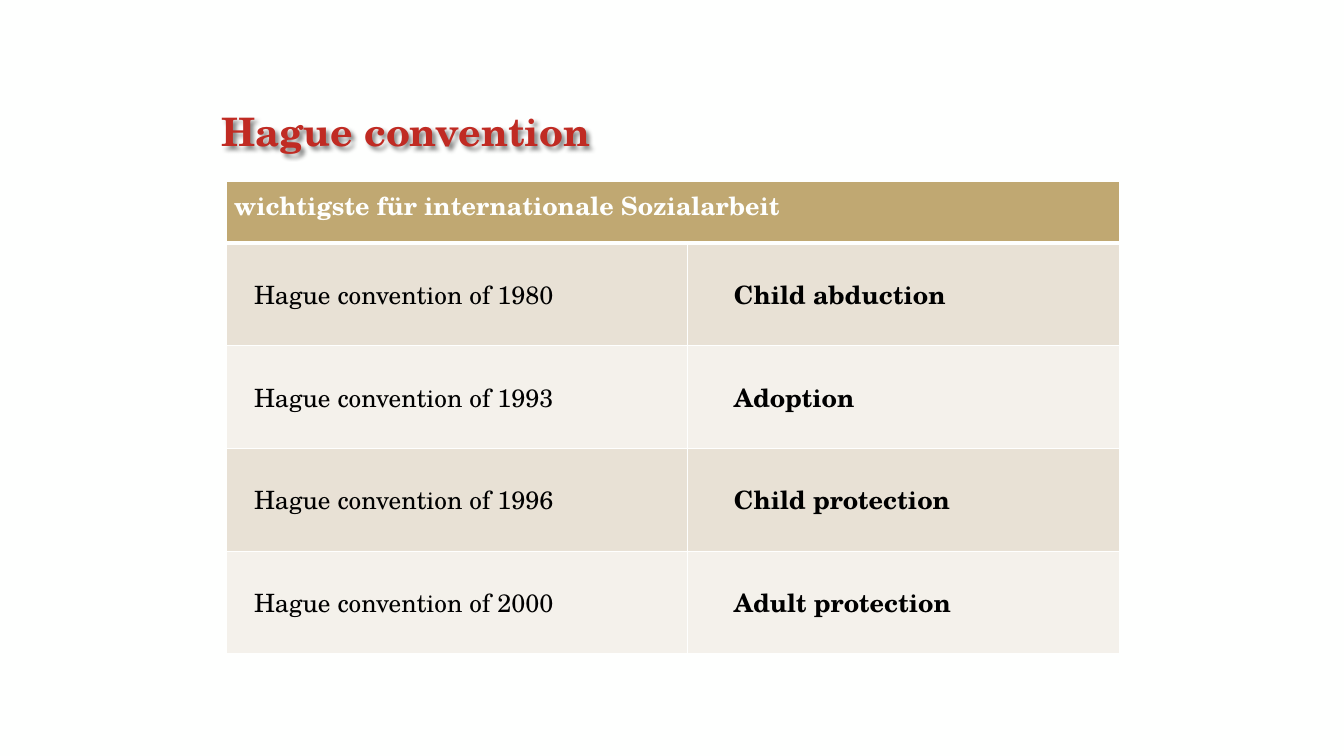
from dataclasses import dataclass

import lxml.etree
import pptx
import pptx.dml.color
import pptx.enum.text
import pptx.oxml.ns
import pptx.util

RGBColor = pptx.dml.color.RGBColor
WHITE = RGBColor(0xFE, 0xFF, 0xFE)
BLACK = RGBColor(0x00, 0x00, 0x00)
RED = RGBColor(0xC0, 0x2B, 0x23)
GOLD = RGBColor(0xC0, 0xA8, 0x72)
BANDS = (RGBColor(0xE8, 0xE1, 0xD5), RGBColor(0xF4, 0xF1, 0xEB))

FONT = "TeX Gyre Schola"
SLIDE_WIDTH = pptx.util.Inches(13.33)
SLIDE_HEIGHT = pptx.util.Inches(7.5)
TABLE_LEFT, TABLE_TOP = 0.1688, 0.24
COLUMN_WIDTHS = (0.3428, 0.3218)
HEADER_HEIGHT, ROW_HEIGHT = 0.0813, 0.136
COLUMN_INDENTS = (0.2, 0.39)


@dataclass(frozen=True)
class Convention:
    title: str
    subject: str


CONVENTIONS = (
    Convention("Hague convention of 1980", "Child abduction"),
    Convention("Hague convention of 1993", "Adoption"),
    Convention("Hague convention of 1996", "Child protection"),
    Convention("Hague convention of 2000", "Adult protection"),
)


def across(share: float) -> int:
    return round(SLIDE_WIDTH * share)


def down(share: float) -> int:
    return round(SLIDE_HEIGHT * share)


def add_element(parent, tag: str, **attributes):
    element = lxml.etree.SubElement(parent, pptx.oxml.ns.qn(tag))
    for name, value in attributes.items():
        element.set(name, str(value))
    return element


def write(text_frame, text: str, size: float, color: RGBColor, bold: bool, indent: float = 0) -> None:
    text_frame.text = text
    paragraph = text_frame.paragraphs[0]
    paragraph._p.get_or_add_pPr().set("marL", str(pptx.util.Inches(indent)))
    font = paragraph.runs[0].font
    font.name = FONT
    font.size = pptx.util.Pt(size)
    font.bold = bold
    font.color.rgb = color


def add_title(slide) -> None:
    shape = slide.shapes.add_textbox(across(0.1583), down(0.1413), across(0.5311), down(0.0587))
    frame = shape.text_frame
    frame.word_wrap = True
    frame.margin_left = frame.margin_right = frame.margin_top = frame.margin_bottom = 0
    write(frame, "Hague convention", 28, RED, True, 0.09)
    effects = add_element(shape._element.spPr, "a:effectLst")
    shadow = add_element(effects, "a:outerShdw", blurRad=pptx.util.Pt(3), dist=pptx.util.Pt(3),
                         dir=2700000, algn="tl", rotWithShape=0)
    color = add_element(shadow, "a:srgbClr", val=BLACK)
    add_element(color, "a:alpha", val=45000)


def style_cell(cell, fill: RGBColor, bottom_width: float = 1) -> None:
    properties = cell._tc.get_or_add_tcPr()
    for side, width in (("L", 1), ("R", 1), ("T", 1), ("B", bottom_width)):
        line = add_element(properties, f"a:ln{side}", w=pptx.util.Pt(width))
        add_element(add_element(line, "a:solidFill"), "a:srgbClr", val=WHITE)
    cell.margin_left = cell.margin_right = pptx.util.Inches(0.07)
    cell.margin_top = cell.margin_bottom = pptx.util.Inches(0.04)
    cell.fill.solid()
    cell.fill.fore_color.rgb = fill


def add_convention_table(slide) -> None:
    height = HEADER_HEIGHT + ROW_HEIGHT * len(CONVENTIONS)
    table = slide.shapes.add_table(
        len(CONVENTIONS) + 1, len(COLUMN_WIDTHS), across(TABLE_LEFT), down(TABLE_TOP),
        across(sum(COLUMN_WIDTHS)), down(height),
    ).table
    for column, width in zip(table.columns, COLUMN_WIDTHS):
        column.width = across(width)
    for index, row in enumerate(table.rows):
        row.height = down(ROW_HEIGHT if index else HEADER_HEIGHT)

    header = table.cell(0, 0)
    header.merge(table.cell(0, 1))
    for cell in table.rows[0].cells:
        style_cell(cell, GOLD, 3)
    write(header.text_frame, "wichtigste für internationale Sozialarbeit", 18, WHITE, True)

    for index, convention in enumerate(CONVENTIONS):
        texts = (convention.title, convention.subject)
        for column, (text, indent) in enumerate(zip(texts, COLUMN_INDENTS)):
            cell = table.cell(index + 1, column)
            style_cell(cell, BANDS[index % 2])
            cell.vertical_anchor = pptx.enum.text.MSO_ANCHOR.MIDDLE
            write(cell.text_frame, text, 18, BLACK, column == 1, indent)


def main() -> None:
    presentation = pptx.Presentation()
    presentation.slide_width = SLIDE_WIDTH
    presentation.slide_height = SLIDE_HEIGHT
    slide = presentation.slides.add_slide(presentation.slide_layouts[6])
    slide.background.fill.solid()
    slide.background.fill.fore_color.rgb = WHITE
    add_title(slide)
    add_convention_table(slide)
    presentation.save("out.pptx")


if __name__ == "__main__":
    main()
